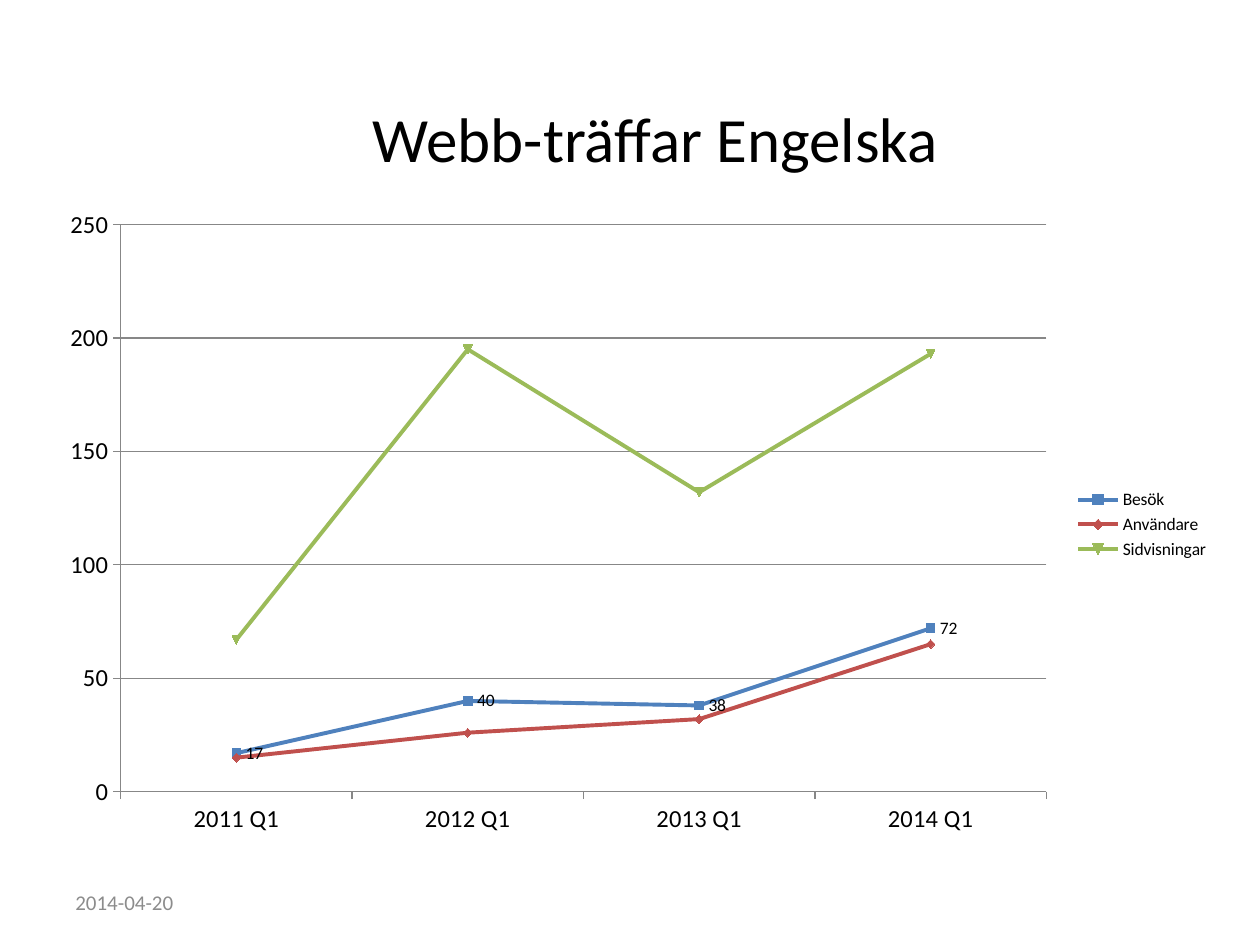
from dataclasses import dataclass
from typing import Any

from lxml import etree
from pptx import Presentation
from pptx import util as u
from pptx.chart.data import CategoryChartData
from pptx.dml.color import RGBColor
from pptx.enum import chart as ch
from pptx.enum import text
from pptx.oxml import ns


def rgb(value):
    """Turn a hex string into a colour."""
    return RGBColor.from_string(value)


@dataclass
class Deck:
    """Hold the style and the current slide; lengths are shares of its size."""
    prs: Any
    s: Any = None
    font: str = "Calibri"
    ink: str = "000000"
    muted: str = "8C8C8C"
    rule: str = "878787"
    palette: tuple = ("4F81BD", "C0504D", "9BBB59")

    def add_slide(self):
        """Start a blank slide."""
        self.s = self.prs.slides.add_slide(self.prs.slide_layouts[6])

    def box(self, x, y, w, h):
        """Convert shares of the slide to lengths."""
        width, height = self.prs.slide_width, self.prs.slide_height
        return int(x * width), int(y * height), int(w * width), int(h * height)

    def style(self, font, size, color):
        """Apply typeface, size and colour."""
        font.name, font.size = self.font, u.Pt(size)
        font.color.rgb = rgb(color)

    def label(self, words, at, size, color, align):
        """Add a line of vertically centred text."""
        tf = self.s.shapes.add_textbox(*self.box(*at)).text_frame
        tf.word_wrap = True
        tf.vertical_anchor = text.MSO_ANCHOR.MIDDLE
        p = tf.paragraphs[0]
        p.alignment = align
        r = p.add_run()
        r.text = words
        self.style(r.font, size, color)

    def axis(self, axis, size):
        """Style an axis with outward ticks."""
        self.style(axis.tick_labels.font, size, self.ink)
        axis.major_tick_mark = ch.XL_TICK_MARK.OUTSIDE
        axis.format.line.color.rgb = rgb(self.rule)
        axis.format.line.width = u.Pt(0.75)

    def plot_area(self, chart, **shares):
        """Fix the inner plot area as shares of the chart."""
        area = chart.plots[0]._element.getparent()
        for old in area.findall(ns.qn("c:layout")):
            area.remove(old)
        layout = etree.Element(ns.qn("c:layout"))
        manual = etree.SubElement(layout, ns.qn("c:manualLayout"))
        settings = {"layoutTarget": "inner", "xMode": "edge", "yMode": "edge", **shares}
        for name, value in settings.items():
            etree.SubElement(manual, ns.qn(f"c:{name}")).set("val", str(value))
        area.insert(0, layout)

    def line_chart(self, cats, series, at, labelled):
        """Add a line chart with markers and a legend on the right."""
        data = CategoryChartData()
        data.categories = cats
        for name, values in series.items():
            data.add_series(name, values)
        chart = self.s.shapes.add_chart(
            ch.XL_CHART_TYPE.LINE_MARKERS, *self.box(*at), data).chart
        chart.has_title = False
        self.style(chart.font, 10, self.ink)
        chart.has_legend = True
        chart.legend.position = ch.XL_LEGEND_POSITION.RIGHT
        chart.legend.include_in_layout = False
        self.style(chart.legend.font, 10, self.ink)

        for axis in (chart.category_axis, chart.value_axis):
            self.axis(axis, 14)
        scale = chart.value_axis
        scale.minimum_scale, scale.maximum_scale, scale.major_unit = 0, 250, 50
        scale.has_major_gridlines = True
        scale.major_gridlines.format.line.color.rgb = rgb(self.rule)
        scale.major_gridlines.format.line.width = u.Pt(0.75)

        chart.plots[0].vary_by_categories = False
        for ser, color in zip(chart.plots[0].series, self.palette):
            ser.smooth = False
            ser.format.line.color.rgb = rgb(color)
            ser.format.line.width = u.Pt(2.25)
            ser.marker.size = 5
            ser.marker.format.fill.solid()
            ser.marker.format.fill.fore_color.rgb = rgb(color)
            ser.marker.format.line.color.rgb = rgb(color)
            if ser.name == labelled:
                labels = ser.data_labels
                labels.show_value = True
                labels.position = ch.XL_LABEL_POSITION.RIGHT
                self.style(labels.font, 10, self.ink)
        self.plot_area(chart, x=0.06, y=0.04, w=0.79, h=0.87)


def main():
    """Build the web traffic slide."""
    prs = Presentation()
    prs.slide_width, prs.slide_height = u.Inches(10), u.Inches(7.5)
    deck = Deck(prs)
    deck.add_slide()
    deck.label("2014-04-20", (0.05, 0.93, 0.23, 0.05), 12, deck.muted,
               text.PP_ALIGN.LEFT)
    deck.label("Webb-träffar Engelska", (0.07, 0.06, 0.9, 0.17), 36, deck.ink,
               text.PP_ALIGN.CENTER)
    deck.line_chart(
        [f"{year} Q1" for year in range(2011, 2015)],
        {"Besök": (17, 40, 38, 72),
         "Användare": (15, 26, 32, 65),
         "Sidvisningar": (67, 195, 132, 193)},
        (0.04, 0.21, 0.93, 0.69), labelled="Besök")
    prs.save("out.pptx")


if __name__ == "__main__":
    main()
